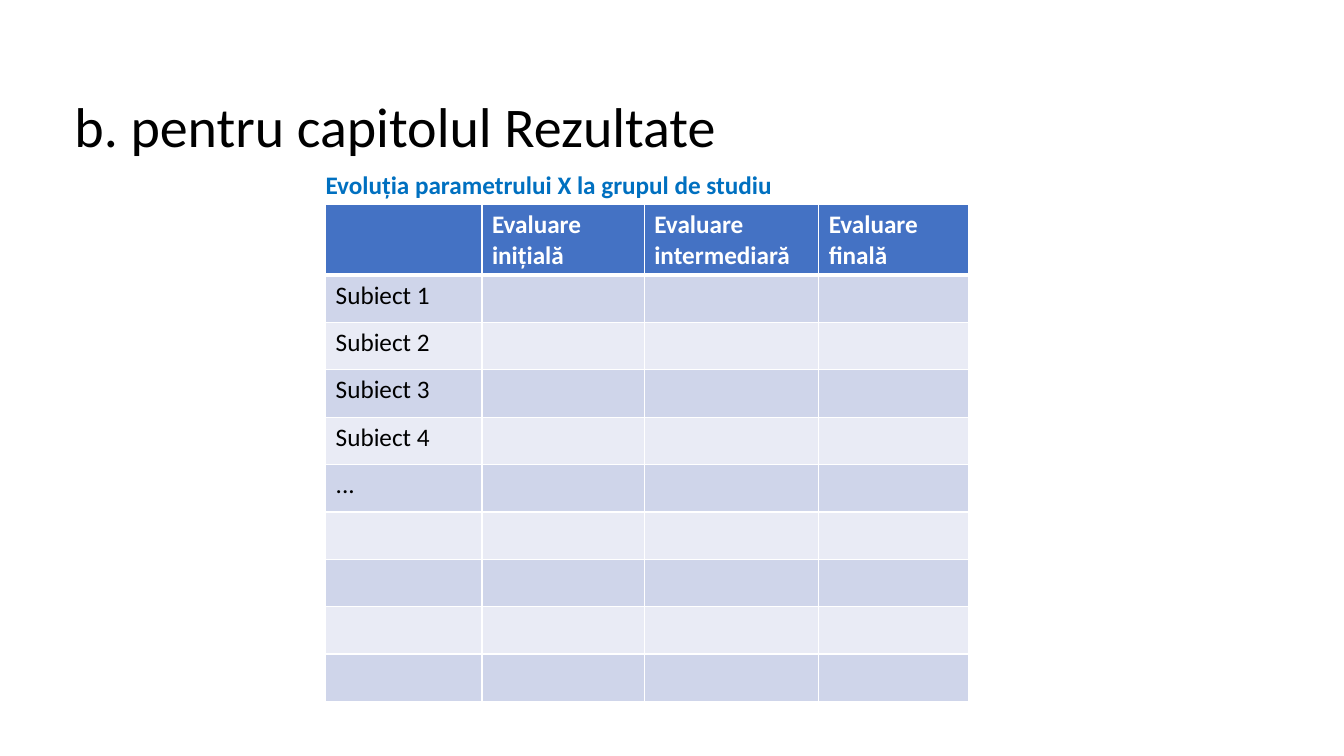
from lxml import etree
from pptx import Presentation, util as u
from pptx.dml.color import RGBColor
from pptx.enum import text
from pptx.oxml.ns import qn

BLACK = RGBColor(0x00, 0x00, 0x00)
WHITE = RGBColor(0xFF, 0xFF, 0xFF)
CAPTION_BLUE = RGBColor(0x00, 0x70, 0xC0)
HEADER_BLUE = RGBColor(0x44, 0x72, 0xC4)
BANDS = [RGBColor(0xE9, 0xEB, 0xF5), RGBColor(0xCF, 0xD5, 0xEA)]

COLUMNS = [1.55, 1.61, 1.73, 1.49]
HEADER_HEIGHT, ROW_HEIGHT = 0.7, 0.47
HEADERS = [[], ["Evaluare", "inițială"], ["Evaluare", "intermediară"], ["Evaluare finală"]]
SUBJECTS = [f"Subiect {n}" for n in range(1, 5)] + ["..."]
ROWS = 10


def write(tf, lines, size, color, bold=False):
    """Put each line in its own paragraph of the text frame."""
    for i, line in enumerate(lines):
        p = tf.add_paragraph() if i else tf.paragraphs[0]
        r = p.add_run()
        r.text = line
        r.font.name, r.font.size, r.font.bold = "Calibri", u.Pt(size), bold
        r.font.color.rgb = color


def set_borders(cell, top, bottom):
    """Draw white borders; top and bottom are widths in points."""
    tcPr = cell._tc.get_or_add_tcPr()
    for i, (side, width) in enumerate(zip("LRTB", (1, 1, top, bottom))):
        ln = etree.Element(qn(f"a:ln{side}"), w=str(u.Pt(width)))
        fill = etree.SubElement(ln, qn("a:solidFill"))
        etree.SubElement(fill, qn("a:srgbClr"), val=str(WHITE))
        tcPr.insert(i, ln)


prs = Presentation()
prs.slide_width, prs.slide_height = u.Inches(13.33), u.Inches(7.5)
s = prs.slides.add_slide(prs.slide_layouts[6])

title = s.shapes.add_textbox(u.Inches(0.64), u.Inches(0.84), u.Inches(11.5), u.Inches(0.79))
tf = title.text_frame
tf.word_wrap = True
tf.vertical_anchor = text.MSO_ANCHOR.BOTTOM
write(tf, ["b. pentru capitolul Rezultate"], 40, BLACK)
tf.paragraphs[0].line_spacing = 0.9

height = HEADER_HEIGHT + (ROWS - 1) * ROW_HEIGHT
table = s.shapes.add_table(ROWS, len(COLUMNS), u.Inches(3.23), u.Inches(2.03),
                           u.Inches(sum(COLUMNS)), u.Inches(height)).table
for column, width in zip(table.columns, COLUMNS):
    column.width = u.Inches(width)

for i, row in enumerate(table.rows):
    row.height = u.Inches(ROW_HEIGHT if i else HEADER_HEIGHT)
    for cell in row.cells:
        cell.fill.solid()
        cell.fill.fore_color.rgb = BANDS[i % 2] if i else HEADER_BLUE
        set_borders(cell, top=3 if i == 1 else 1, bottom=1 if i else 3)

for j, lines in enumerate(HEADERS):
    write(table.cell(0, j).text_frame, lines, 18, WHITE, bold=True)
for i, subject in enumerate(SUBJECTS, start=1):
    write(table.cell(i, 0).text_frame, [subject], 18, BLACK)

caption = s.shapes.add_textbox(u.Inches(3.13), u.Inches(1.63), u.Inches(7.25), u.Inches(0.4))
caption.text_frame.word_wrap = True
write(caption.text_frame, ["Evoluția parametrului X la grupul de studiu"], 18, CAPTION_BLUE, bold=True)

prs.save("out.pptx")
